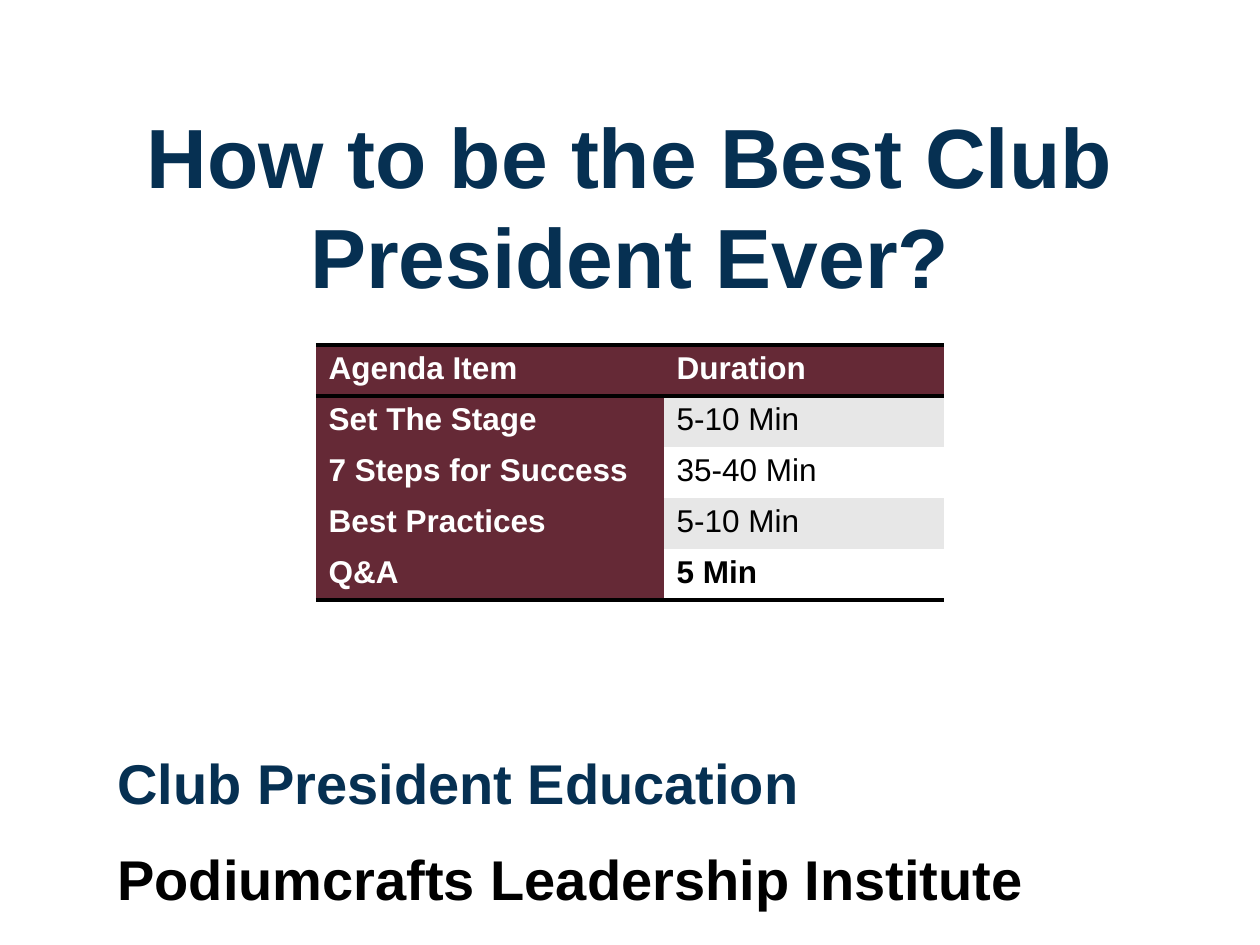
from lxml import etree
from pptx import Presentation
from pptx import util as u
from pptx.dml.color import RGBColor
from pptx.enum import text
from pptx.oxml.ns import qn

NAVY = RGBColor(0x06, 0x30, 0x52)
MAROON = RGBColor(0x65, 0x29, 0x36)
GRAY = RGBColor(0xE7, 0xE7, 0xE7)
WHITE = RGBColor(0xFF, 0xFF, 0xFF)
BLACK = RGBColor(0, 0, 0)

MIDDLE, TOP = text.MSO_ANCHOR.MIDDLE, text.MSO_ANCHOR.TOP
LEFT, CENTER = text.PP_ALIGN.LEFT, text.PP_ALIGN.CENTER

HEADINGS = [
    ("How to be the Best Club President Ever?", (84, 126, 1092, 158), 48, NAVY, MIDDLE, CENTER, 6),
    ("Podiumcrafts Leadership Institute", (105, 835, 977, 78), 32, BLACK, TOP, LEFT, 10),
    ("Club President Education", (105, 703, 1092, 158), 32, NAVY, MIDDLE, LEFT, 6),
]
AGENDA = [
    ("Agenda Item", "Duration"),
    ("Set The Stage", "5-10 Min"),
    ("7 Steps for Success", "35-40 Min"),
    ("Best Practices", "5-10 Min"),
    ("Q&A", "5 Min"),
]
AGENDA_LEFT, AGENDA_TOP = 316, 345
COLUMN_WIDTHS = (348, 280)
ROW_HEIGHT = 51


def px(n):
    return u.Emu(n * 914400 // 126)


def write(frame, words, size, color, bold):
    paragraph = frame.paragraphs[0]
    run = paragraph.add_run()
    run.text = words
    font = run.font
    font.name, font.size, font.bold = "Arial", u.Pt(size), bold
    font.color.rgb = color
    return paragraph


def add_heading(slide, words, place, size, color, anchor, align, inset):
    frame = slide.shapes.add_textbox(*map(px, place)).text_frame
    frame.word_wrap = True
    frame.vertical_anchor = anchor
    frame.margin_top = px(inset)
    write(frame, words, size, color, True).alignment = align


def set_borders(cell, ruled):
    properties = cell._tc.get_or_add_tcPr()
    for index, side in enumerate(("lnL", "lnR", "lnT", "lnB")):
        line = etree.Element(qn(f"a:{side}"), w=str(u.Pt(2)))
        if side in ruled:
            fill = etree.SubElement(line, qn("a:solidFill"))
            etree.SubElement(fill, qn("a:srgbClr"), val=str(BLACK))
        else:
            etree.SubElement(line, qn("a:noFill"))
        properties.insert(index, line)


def add_agenda(slide):
    last = len(AGENDA) - 1
    agenda = slide.shapes.add_table(
        len(AGENDA), len(COLUMN_WIDTHS), px(AGENDA_LEFT), px(AGENDA_TOP),
        px(sum(COLUMN_WIDTHS)), px(ROW_HEIGHT * len(AGENDA))).table
    for column, width in zip(agenda.columns, COLUMN_WIDTHS):
        column.width = px(width)
    for r, entries in enumerate(AGENDA):
        agenda.rows[r].height = px(ROW_HEIGHT)
        ruled = {0: ("lnT", "lnB"), 1: ("lnT",), last: ("lnB",)}.get(r, ())
        for c, words in enumerate(entries):
            cell = agenda.cell(r, c)
            header = r == 0 or c == 0
            cell.fill.solid()
            cell.fill.fore_color.rgb = MAROON if header else GRAY if r % 2 else WHITE
            write(cell.text_frame, words, 18, WHITE if header else BLACK, header or r == last)
            set_borders(cell, ruled)


def main():
    deck = Presentation()
    deck.slide_width, deck.slide_height = px(1260), px(945)
    slide = deck.slides.add_slide(deck.slide_layouts[6])
    for heading in HEADINGS:
        add_heading(slide, *heading)
    add_agenda(slide)
    deck.save("out.pptx")


if __name__ == "__main__":
    main()
